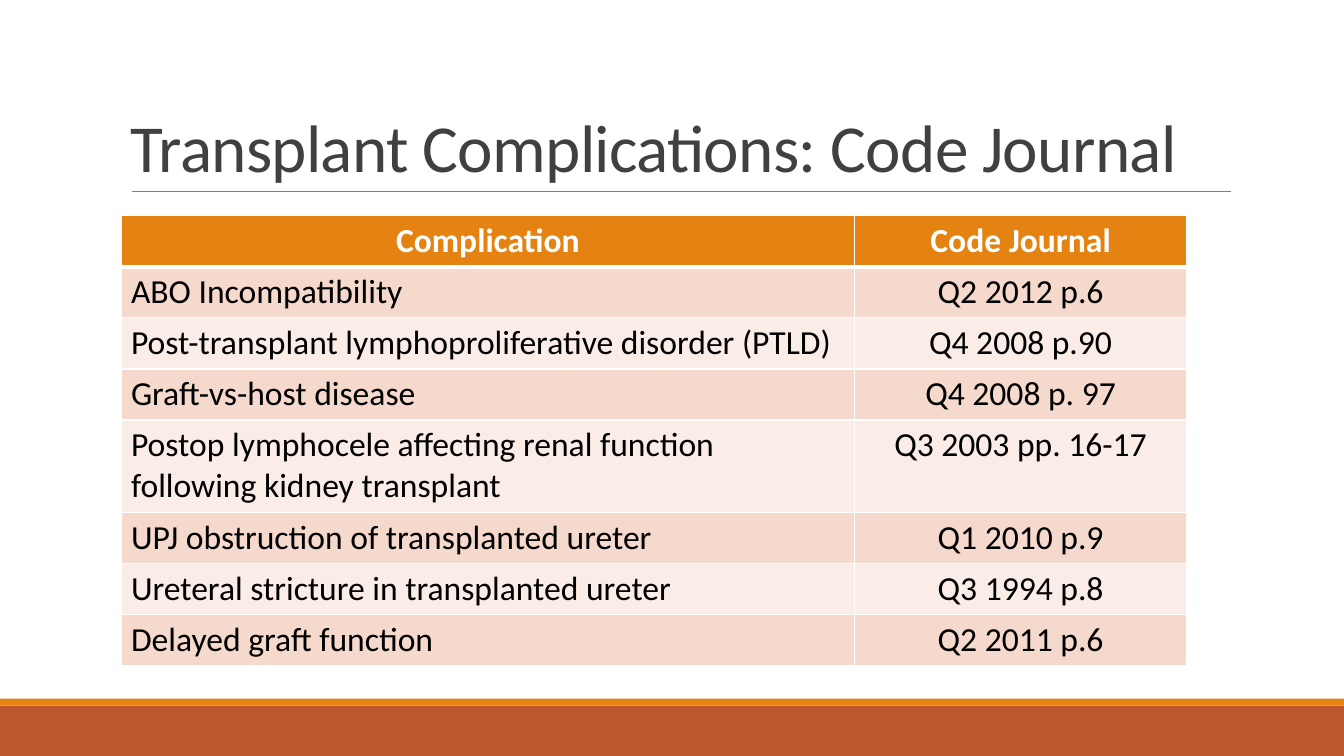
from pptx import Presentation
from pptx.dml.color import RGBColor
from pptx.enum.shapes import MSO_CONNECTOR, MSO_SHAPE
from pptx.enum.text import MSO_ANCHOR, PP_ALIGN
from pptx.oxml.ns import qn
from pptx.util import Pt
from lxml import etree

RECTANGLE, STRAIGHT = MSO_SHAPE.RECTANGLE, MSO_CONNECTOR.STRAIGHT
BOTTOM, LEFT, CENTER = MSO_ANCHOR.BOTTOM, PP_ALIGN.LEFT, PP_ALIGN.CENTER

# Content
TITLE = "Transplant Complications: Code Journal"
HEADER = ("Complication", "Code Journal")
COMPLICATIONS = [
    ("ABO Incompatibility", "Q2 2012 p.6"),
    ("Post-transplant lymphoproliferative disorder (PTLD)", "Q4 2008 p.90"),
    ("Graft-vs-host disease", "Q4 2008 p. 97"),
    ("Postop lymphocele affecting renal function following kidney transplant",
     "Q3 2003 pp. 16-17"),
    ("UPJ obstruction of transplanted ureter", "Q1 2010 p.9"),
    ("Ureteral stricture in transplanted ureter", "Q3 1994 p.8"),
    ("Delayed graft function", "Q2 2011 p.6"),
]

THEME = {
    "font": "Calibri", "title_size": 48, "table_size": 24,
    "title": "404040", "rule": "808080", "text": "000000", "white": "FFFFFF",
    "orange": "E48312", "rust": "BD582C", "bands": ("F5D9CC", "FAEDE7"),
}

# Layout, in points
SLIDE_W, SLIDE_H = 960, 540
FOOTER_TOP, STRIPE_H = 504, 5
TABLE_LEFT, TABLE_TOP = 86.4, 154.1
COLUMN_WIDTHS = (524.2, 236.9)
ROW_H, TALL_ROW_H = 36.5, 65.8
TALL_ROW = 4


def color(key):
    return RGBColor.from_string(THEME.get(key, key))


def style_run(run, size, color_key, bold=False):
    run.font.name = THEME["font"]
    run.font.size = Pt(THEME[size])
    run.font.bold = bold
    run.font.color.rgb = color(color_key)


def add_band(slide, top, height, color_key):
    band = slide.shapes.add_shape(RECTANGLE, 0, Pt(top), Pt(SLIDE_W), Pt(height))
    band.shadow.inherit = False
    band.fill.solid()
    band.fill.fore_color.rgb = color(color_key)
    band.line.fill.background()


def set_borders(cell, bottom_width):
    # Borders come before the fill in the cell properties
    properties = cell._tc.get_or_add_tcPr()
    widths = {"a:lnL": 1, "a:lnR": 1, "a:lnT": 1, "a:lnB": bottom_width}
    for position, (tag, width) in enumerate(widths.items()):
        border = etree.Element(qn(tag), w=str(Pt(width)))
        fill = etree.SubElement(border, qn("a:solidFill"))
        etree.SubElement(fill, qn("a:srgbClr"), val=THEME["white"])
        properties.insert(position, border)


def add_title(slide):
    box = slide.shapes.add_textbox(Pt(86.4), Pt(22.6), Pt(792), Pt(114.2))
    frame = box.text_frame
    frame.word_wrap = True
    frame.vertical_anchor = BOTTOM
    frame.text = TITLE
    paragraph = frame.paragraphs[0]
    paragraph.line_spacing = 0.85
    run = paragraph.runs[0]
    style_run(run, "title_size", "title")
    run.font._element.set("spc", "-50")

    rule = slide.shapes.add_connector(STRAIGHT, Pt(94.3), Pt(136.8), Pt(879), Pt(136.8))
    rule.line.color.rgb = color("rule")
    rule.line.width = Pt(0.5)
    etree.SubElement(rule._element.spPr, qn("a:effectLst"))


def add_complications(slide):
    rows = [HEADER] + COMPLICATIONS
    heights = [TALL_ROW_H if i == TALL_ROW else ROW_H for i in range(len(rows))]
    table = slide.shapes.add_table(
        len(rows), len(HEADER), Pt(TABLE_LEFT), Pt(TABLE_TOP),
        Pt(sum(COLUMN_WIDTHS)), Pt(sum(heights))).table
    for column, width in zip(table.columns, COLUMN_WIDTHS):
        column.width = Pt(width)
    for r, (texts, height) in enumerate(zip(rows, heights)):
        is_header = r == 0
        table.rows[r].height = Pt(height)
        for c, text in enumerate(texts):
            cell = table.cell(r, c)
            cell.text = text
            paragraph = cell.text_frame.paragraphs[0]
            paragraph.alignment = CENTER if is_header or c == 1 else LEFT
            style_run(paragraph.runs[0], "table_size",
                      "white" if is_header else "text", is_header)
            cell.fill.solid()
            cell.fill.fore_color.rgb = color(
                "orange" if is_header else THEME["bands"][(r - 1) % 2])
            set_borders(cell, 3 if is_header else 1)


def main():
    deck = Presentation()
    deck.slide_width, deck.slide_height = Pt(SLIDE_W), Pt(SLIDE_H)
    slide = deck.slides.add_slide(deck.slide_layouts[6])
    # Footer bands
    add_band(slide, FOOTER_TOP, SLIDE_H - FOOTER_TOP, "rust")
    add_band(slide, FOOTER_TOP - STRIPE_H, STRIPE_H, "orange")
    add_title(slide)
    add_complications(slide)
    deck.save("out.pptx")


if __name__ == "__main__":
    main()
